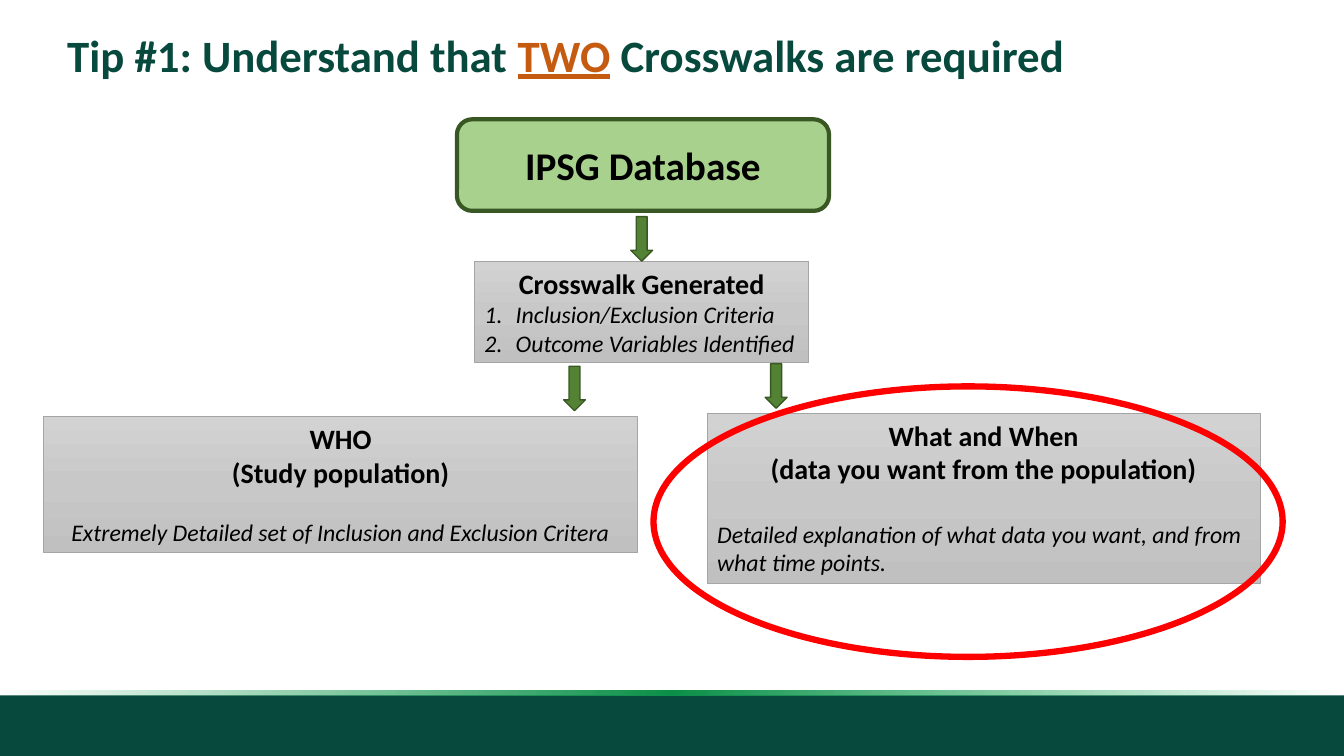
from lxml.etree import SubElement
from pptx import Presentation
from pptx.dml.color import RGBColor
from pptx.enum.shapes import MSO_SHAPE as SHAPE
from pptx.enum.text import MSO_ANCHOR as ANCHOR, MSO_AUTO_SIZE as AUTO_SIZE, PP_ALIGN as ALIGN
from pptx.oxml.ns import qn
from pptx.util import Inches, Pt

# Grid: 16 columns by 9 rows of square cells
SLIDE_WIDTH, SLIDE_HEIGHT = Inches(13.33), Inches(7.5)
COLUMN, ROW = SLIDE_WIDTH / 16, SLIDE_HEIGHT / 9

FONT = "Calibri"
DARK_GREEN = RGBColor(0x07, 0x49, 0x3C)
ORANGE = RGBColor(0xC5, 0x5A, 0x11)
LIGHT_GREEN = RGBColor(0xA9, 0xD1, 0x8E)
ARROW_GREEN = RGBColor(0x54, 0x82, 0x35)
EDGE_GREEN = RGBColor(0x38, 0x57, 0x23)
EDGE_GRAY = RGBColor(0xA5, 0xA5, 0xA5)
RED = RGBColor(0xFF, 0x00, 0x00)
BLACK = RGBColor(0x00, 0x00, 0x00)

# Gradient stops: position in percent, colour, opacity in percent
PANEL_STOPS = [(0, RGBColor(0xD2, 0xD2, 0xD2), 100),
               (50, RGBColor(0xC8, 0xC8, 0xC8), 100),
               (100, RGBColor(0xC0, 0xC0, 0xC0), 100)]
STRIP_STOPS = [(0, RGBColor(0x0D, 0x9D, 0x4F), 0),
               (50, RGBColor(0x0C, 0x90, 0x49), 100),
               (100, RGBColor(0x0F, 0xAB, 0x56), 0)]

ARROW_WIDTH, ARROW_HEIGHT = 0.26, 0.53


def on_grid(box):
    left, top, width, height = box
    return (round(left * COLUMN), round(top * ROW),
            round(width * COLUMN), round(height * ROW))


def add_shape(slide, kind, box, fill=None, edge=None, edge_width=1):
    shape = slide.shapes.add_shape(kind, *on_grid(box))
    shape.shadow.inherit = False
    if fill is None:
        shape.fill.background()
    else:
        shape.fill.solid()
        shape.fill.fore_color.rgb = fill
    if edge is None:
        shape.line.fill.background()
    else:
        shape.line.color.rgb = edge
        shape.line.width = Pt(edge_width)
    return shape


def set_gradient(shape, stops, angle):
    shape.fill.gradient()
    shape.fill.gradient_angle = angle
    stop_list = shape._element.spPr.find(qn("a:gradFill")).find(qn("a:gsLst"))
    for stop in list(stop_list):
        stop_list.remove(stop)
    for position, color, opacity in stops:
        stop = SubElement(stop_list, qn("a:gs"), pos=str(position * 1000))
        color_element = SubElement(stop, qn("a:srgbClr"), val=str(color))
        if opacity < 100:
            SubElement(color_element, qn("a:alpha"), val=str(opacity * 1000))


def format_run(run, size, color=BLACK, bold=False, italic=False):
    run.font.name = FONT
    run.font.size = Pt(size)
    run.font.bold = bold
    run.font.italic = italic
    run.font.color.rgb = color


def set_numbered(paragraph):
    properties = paragraph._p.get_or_add_pPr()
    properties.set("marL", str(Inches(0.31)))
    properties.set("indent", str(-Inches(0.31)))
    SubElement(properties, qn("a:buAutoNum"), type="arabicPeriod")


def add_footer(slide, box):
    left, top, width, height = box
    strip_height = 0.06
    add_shape(slide, SHAPE.RECTANGLE,
              (left, top + strip_height, width, height - strip_height), DARK_GREEN)
    strip = add_shape(slide, SHAPE.RECTANGLE, (left, top, width, strip_height))
    set_gradient(strip, STRIP_STOPS, 0)


def add_title(slide, box):
    title = slide.shapes.title
    title.left, title.top, title.width, title.height = on_grid(box)
    frame = title.text_frame
    frame.word_wrap = True
    frame.auto_size = AUTO_SIZE.NONE
    frame.vertical_anchor = ANCHOR.MIDDLE
    paragraph = frame.paragraphs[0]
    paragraph.alignment = ALIGN.LEFT
    paragraph.line_spacing = 0.9
    for text, color in [("Tip #1: Understand that ", DARK_GREEN), ("TWO", ORANGE),
                        (" Crosswalks are required", DARK_GREEN)]:
        run = paragraph.add_run()
        run.text = text
        format_run(run, 32, color, bold=True)
        run.font.underline = color == ORANGE


def add_database(slide, box):
    database = add_shape(slide, SHAPE.ROUNDED_RECTANGLE, box, LIGHT_GREEN, EDGE_GREEN, 3)
    frame = database.text_frame
    frame.text = "IPSG Database"
    frame.vertical_anchor = ANCHOR.MIDDLE
    frame.paragraphs[0].alignment = ALIGN.CENTER
    format_run(frame.paragraphs[0].runs[0], 28, bold=True)


def add_panel(slide, box, headings, details, gap=0, alignment=ALIGN.LEFT, numbered=False):
    """Gray box with bold headings above italic details."""
    panel = add_shape(slide, SHAPE.RECTANGLE, box, edge=EDGE_GRAY, edge_width=0.5)
    set_gradient(panel, PANEL_STOPS, 270)
    frame = panel.text_frame
    frame.word_wrap = True
    frame.vertical_anchor = ANCHOR.TOP
    frame.text = "\n".join(headings + details)
    for index, paragraph in enumerate(frame.paragraphs):
        is_heading = index < len(headings)
        if numbered and not is_heading:
            set_numbered(paragraph)
        paragraph.alignment = ALIGN.CENTER if is_heading else alignment
        if gap and index == len(headings):
            paragraph.space_before = Pt(gap)
        format_run(paragraph.runs[0], 20 if is_heading else 17,
                   bold=is_heading, italic=not is_heading)


def add_arrow(slide, center, top):
    add_shape(slide, SHAPE.DOWN_ARROW,
              (center - ARROW_WIDTH / 2, top, ARROW_WIDTH, ARROW_HEIGHT),
              ARROW_GREEN, EDGE_GREEN)


def add_flow(slide, box):
    """Database, crosswalk and the two resulting crosswalk panels."""
    left, top, _, _ = box
    add_database(slide, (left + 4.92, top, 4.43, 1.09))
    add_panel(slide, (left + 5.13, top + 1.69, 3.98, 1.21),
              ["Crosswalk Generated"],
              ["Inclusion/Exclusion Criteria", "Outcome Variables Identified"],
              numbered=True)
    add_panel(slide, (left + 7.9, top + 3.5, 6.58, 2.02),
              ["What and When", "(data you want from the population)"],
              ["Detailed explanation of what data you want, and from what time points."],
              gap=24.4)
    add_panel(slide, (left, top + 3.54, 7.07, 1.62),
              ["WHO", "(Study population)"],
              ["Extremely Detailed set of Inclusion and Exclusion Critera"],
              gap=20.7, alignment=ALIGN.CENTER)
    for center, arrow_top in [(7.12, 1.16), (6.32, 2.94), (8.72, 2.91)]:
        add_arrow(slide, left + center, top + arrow_top)
    # Ring around the second crosswalk
    add_shape(slide, SHAPE.OVAL, (left + 7.26, top + 3.18, 7.49, 3.22),
              edge=RED, edge_width=4.5)


def main():
    presentation = Presentation()
    presentation.slide_width, presentation.slide_height = SLIDE_WIDTH, SLIDE_HEIGHT
    slide = presentation.slides.add_slide(presentation.slide_layouts[5])
    add_footer(slide, (0, 8.22, 16, 0.78))
    add_title(slide, (0.68, 0.29, 13.8, 0.79))
    add_flow(slide, (0.52, 1.42, 14.75, 6.4))
    presentation.save("out.pptx")


if __name__ == "__main__":
    main()
